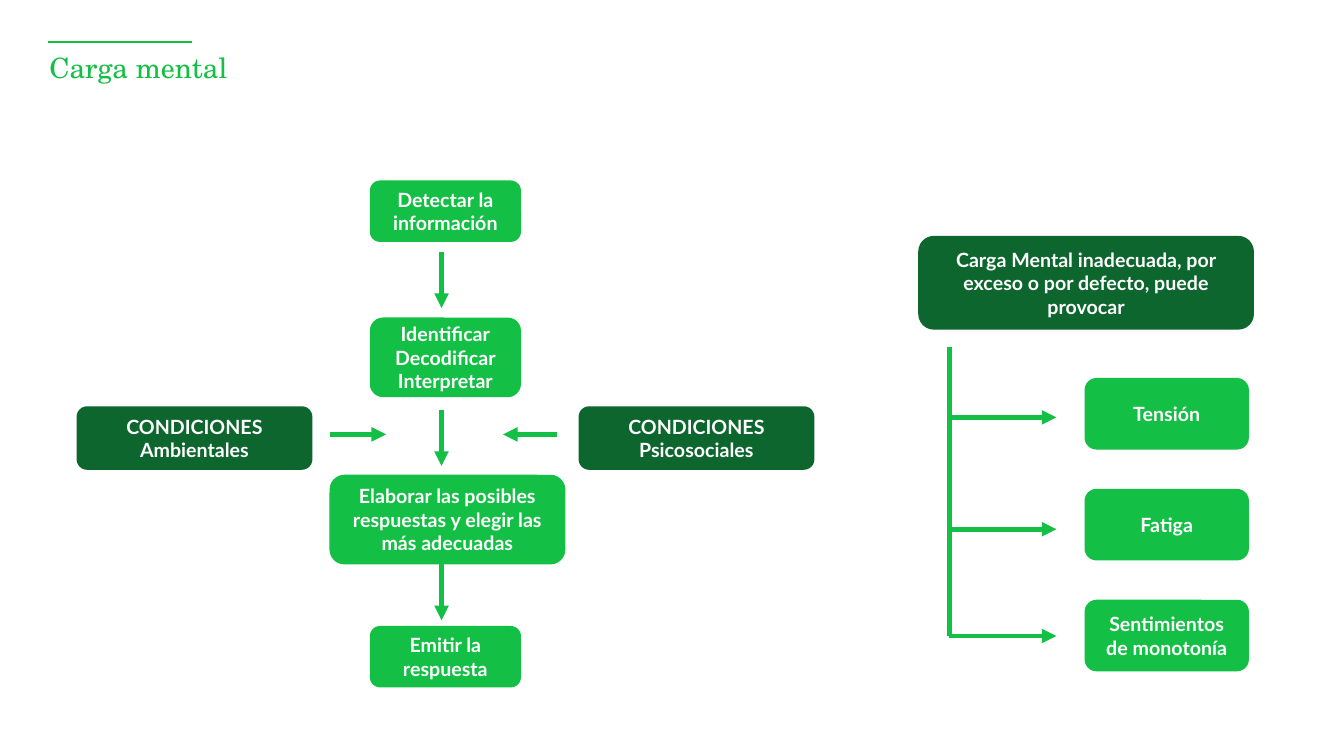
"""Build the slide on mental load: its process, conditions and effects."""
from lxml import etree
from pptx import Presentation
from pptx.dml.color import RGBColor
from pptx.enum.shapes import MSO_CONNECTOR, MSO_SHAPE
from pptx.enum.text import MSO_ANCHOR, PP_ALIGN
from pptx.oxml.ns import qn
from pptx.util import Pt

STRAIGHT = MSO_CONNECTOR.STRAIGHT
ROUNDED = MSO_SHAPE.ROUNDED_RECTANGLE
MIDDLE, TOP = MSO_ANCHOR.MIDDLE, MSO_ANCHOR.TOP
CENTER, LEFT = PP_ALIGN.CENTER, PP_ALIGN.LEFT

THEME = {
    "green": RGBColor.from_string("13C045"),
    "dark": RGBColor.from_string("0D662E"),
    "accent": RGBColor.from_string("15BF45"),
    "title": {"name": "TeX Gyre Schola", "size": Pt(20), "bold": False},
    "label": {"name": "Lato", "size": Pt(14), "bold": True},
    "white": RGBColor.from_string("FFFFFF"),
    "arrow": 3.5,
    "rule": 1.75,
}

TITLE = "Carga mental"
STEPS = [
    (["Detectar la información"], (264.2, 128.9, 108, 43.9)),
    (["Identificar", "Decodificar", "Interpretar"], (264.2, 226.8, 108, 56.9)),
    (["Elaborar las posibles respuestas y elegir las más adecuadas"],
     (235.4, 339.1, 168.5, 64.1)),
    (["Emitir la respuesta"], (264.2, 447.1, 108, 43.9)),
]
CONDITIONS = [
    (["CONDICIONES", "Ambientales"], 54.7, (235.4, 275.8)),
    (["CONDICIONES", "Psicosociales"], 413.3, (398.2, 359.3)),
]
CAUSE = "Carga Mental inadecuada, por exceso o por defecto, puede provocar"
EFFECTS = [("Tensión", 298.1), ("Fatiga", 378), ("Sentimientos de monotonía", 454.3)]

STEP_X, STEP_ARROW_TOPS, STEP_ARROW_LENGTH = 315.4, (180.2, 293, 403.2), 39.8
CONDITION_TOP, CONDITION_SIZE, CONDITION_ARROW_Y = 290.2, (168.5, 45.4), 310.3
CAUSE_BOX = (655.9, 168.5, 239.8, 67)
STEM_X, STEM_TOP, BRANCH_END = 678.2, 247.7, 754.6
EFFECT_LEFT, EFFECT_TOP, EFFECT_STEP, EFFECT_SIZE = 774.7, 270, 79.2, (117.4, 51.1)


def write(shape, lines, font_values, color, alignment, anchor):
    """Write the lines into a shape with one format."""
    frame = shape.text_frame
    frame.word_wrap = True
    frame.vertical_anchor = anchor
    frame.text = "\n".join(lines)
    for paragraph in frame.paragraphs:
        paragraph.alignment = alignment
        for name, value in font_values.items():
            setattr(paragraph.font, name, value)
        paragraph.font.color.rgb = color


def add_box(slide, lines, box, color):
    """Add a filled rounded box with centred text."""
    shape = slide.shapes.add_shape(ROUNDED, *map(Pt, box))
    shape.shadow.inherit = False
    shape.fill.solid()
    shape.fill.fore_color.rgb = color
    shape.line.fill.background()
    write(shape, lines, THEME["label"], THEME["white"], CENTER, MIDDLE)


def add_line(slide, ends, color=THEME["green"], width=THEME["arrow"], arrow=True):
    """Add a straight line, with an arrowhead at its end if asked."""
    connector = slide.shapes.add_connector(STRAIGHT, *map(Pt, ends))
    connector.line.color.rgb = color
    connector.line.width = Pt(width)
    if arrow:
        outline = connector.line._get_or_add_ln()
        etree.SubElement(outline, qn("a:tailEnd"), type="triangle")
    etree.SubElement(connector._element.spPr, qn("a:effectLst"))


def add_title(slide):
    """Add the title and the rule above it."""
    add_line(slide, (34.6, 30.2, 136.8, 30.2), THEME["accent"], THEME["rule"], False)
    title = slide.shapes.add_textbox(*map(Pt, (35.3, 38.9, 776.9, 41)))
    for side in ("left", "top", "right", "bottom"):
        setattr(title.text_frame, f"margin_{side}", 0)
    write(title, [TITLE], THEME["title"], THEME["accent"], LEFT, TOP)
    title.text_frame.paragraphs[0].line_spacing = 0.9


def add_process(slide):
    """Add the column of steps and the conditions beside it."""
    for lines, box in STEPS:
        add_box(slide, lines, box, THEME["green"])
    for top in STEP_ARROW_TOPS:
        add_line(slide, (STEP_X, top, STEP_X, top + STEP_ARROW_LENGTH))
    for lines, left, (start, end) in CONDITIONS:
        add_box(slide, lines, (left, CONDITION_TOP, *CONDITION_SIZE), THEME["dark"])
        add_line(slide, (start, CONDITION_ARROW_Y, end, CONDITION_ARROW_Y))


def add_effects(slide):
    """Add the cause and the tree of its effects."""
    add_box(slide, [CAUSE], CAUSE_BOX, THEME["dark"])
    for index, (label, branch_y) in enumerate(EFFECTS):
        top = EFFECT_TOP + index * EFFECT_STEP
        add_box(slide, [label], (EFFECT_LEFT, top, *EFFECT_SIZE), THEME["green"])
        add_line(slide, (STEM_X, branch_y, BRANCH_END, branch_y))
    add_line(slide, (STEM_X, STEM_TOP, STEM_X, EFFECTS[-1][1]), arrow=False)


def main():
    """Build and save the presentation."""
    presentation = Presentation()
    presentation.slide_width, presentation.slide_height = Pt(960), Pt(540)
    slide = presentation.slides.add_slide(presentation.slide_layouts[6])
    add_title(slide)
    add_process(slide)
    add_effects(slide)
    presentation.save("out.pptx")


if __name__ == "__main__":
    main()
